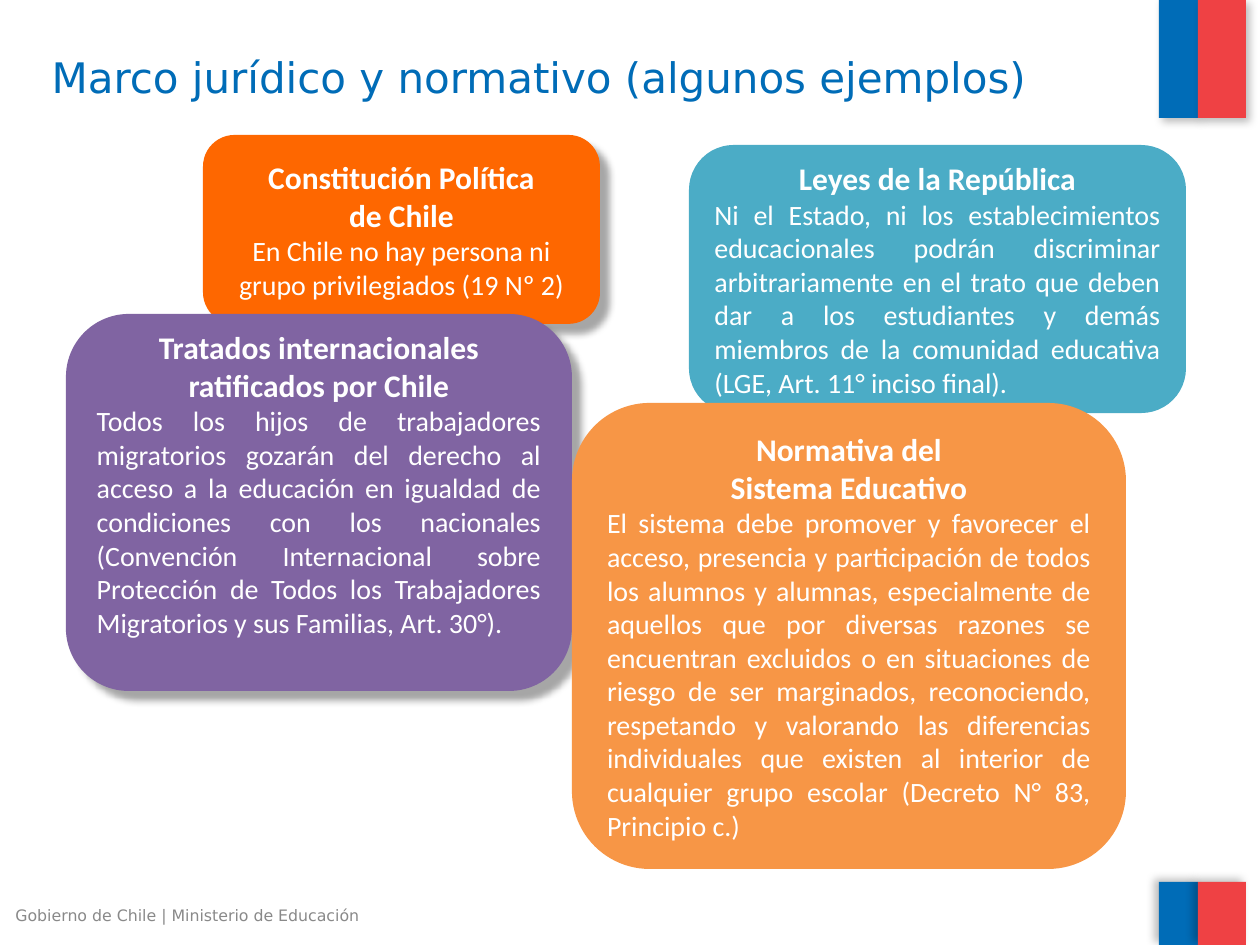
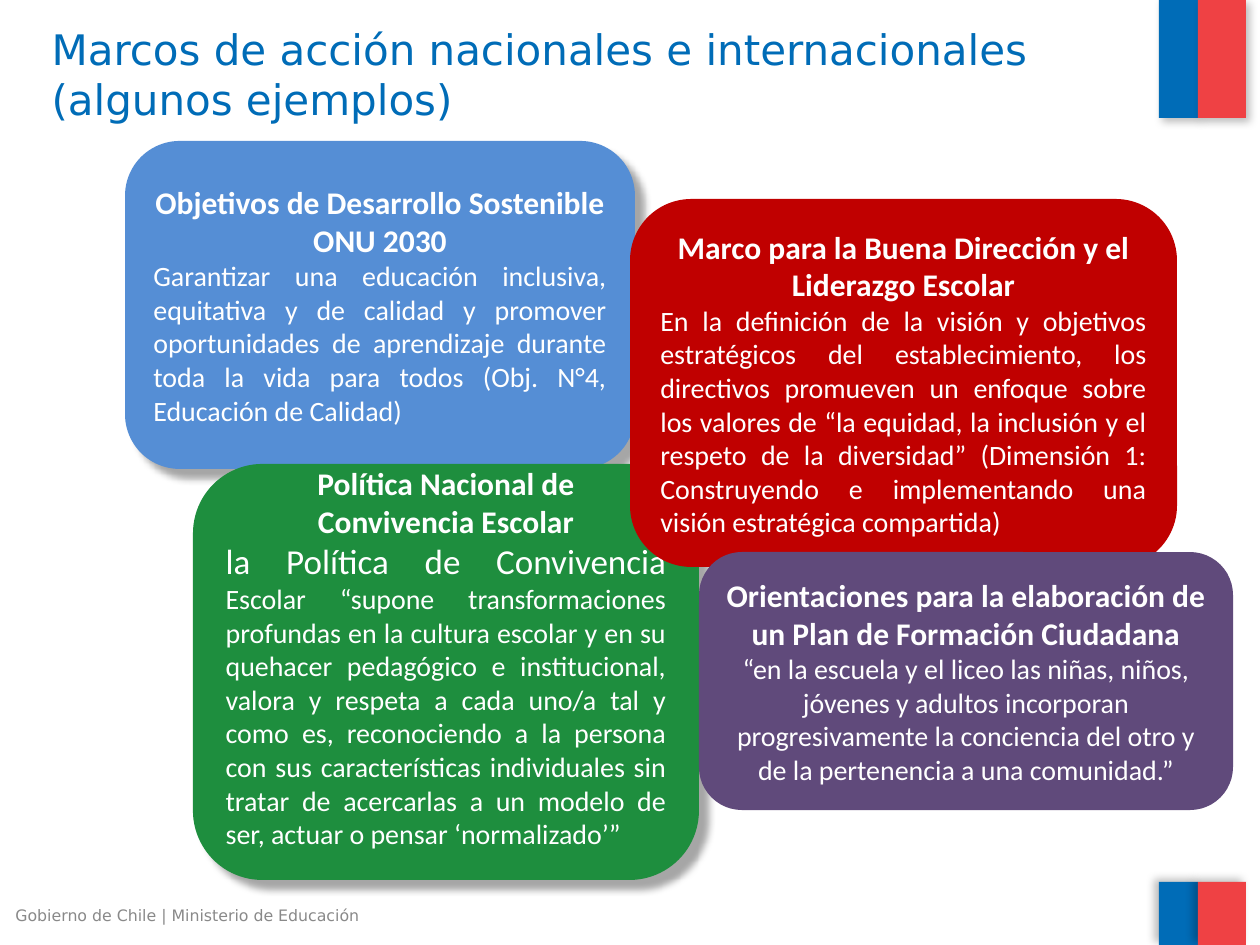
from lxml.etree import SubElement
from pptx import Presentation
from pptx.dml.color import RGBColor
from pptx.enum.shapes import MSO_SHAPE
from pptx.enum.text import MSO_ANCHOR, MSO_AUTO_SIZE, PP_ALIGN
from pptx.oxml.ns import qn
from pptx.util import Emu, Pt

PX = 914400 / 126
COLORS = {
    "blue": "006CB7", "red": "EF4144", "gray": "898989", "white": "FFFFFF",
    "black": "000000", "orange": "FE6700", "purple": "8064A2",
    "teal": "4BACC6", "peach": "F79646", "sky": "558ED5",
    "green": "1E8E3E", "wine": "C00000", "plum": "604A7B",
}
SANS, BODY = "DejaVu Sans", "Calibri"
LEFT, MID, JUST = PP_ALIGN.LEFT, PP_ALIGN.CENTER, PP_ALIGN.JUSTIFY
FOOTER = "Gobierno de Chile | Ministerio de Educación"

# Shadows: opacity %, blur pt, distance pt, angle
SOFT, BACK, DEEP = (25, 5, 3, 45), (25, 5, 3, 215), (35, 4, 8, 45)

# Shared bands: place, colour, shadow
BANDS = [
    ((1159, -1, 39, 119), "blue", SOFT),
    ((1198, 0, 48, 118), "red", SOFT),
    ((1159, 882, 39, 63), "blue", BACK),
    ((1198, 882, 48, 63), "red", BACK),
]


def px(*vals):
    return [Emu(round(v * PX)) for v in vals]


def tint(name):
    return RGBColor.from_string(COLORS[name])


def write(para, text, size=16, font=BODY, color="white", bold=False,
          align=LEFT):
    para.alignment = align
    run = para.add_run()
    run.text = text
    run.font.name = font
    run.font.size = Pt(size)
    run.font.bold = bold
    run.font.color.rgb = tint(color)


def shade(shape, alpha, blur, dist, angle):
    effects = shape._element.spPr.find(qn("a:effectLst"))
    outer = SubElement(effects, qn("a:outerShdw"), blurRad=str(Pt(blur)),
                       dist=str(Pt(dist)), dir=str(angle * 60000),
                       algn="tl", rotWithShape="0")
    color = SubElement(outer, qn("a:srgbClr"), val=COLORS["black"])
    SubElement(color, qn("a:alpha"), val=str(alpha * 1000))


def block(slide, kind, place, color, shadow=None):
    shape = slide.shapes.add_shape(kind, *px(*place))
    shape.fill.solid()
    shape.fill.fore_color.rgb = tint(color)
    shape.line.fill.background()
    shape.shadow.inherit = False
    if shadow:
        shade(shape, *shadow)
    return shape


def card(slide, place, color, heads, body, align=JUST, shadow=None,
         lead=None, foot=6):
    """Rounded box with bold heading lines over one body paragraph."""
    shape = block(slide, MSO_SHAPE.ROUNDED_RECTANGLE, place, color, shadow)
    frame = shape.text_frame
    frame.word_wrap = True
    frame.vertical_anchor = MSO_ANCHOR.MIDDLE
    frame.margin_bottom = px(foot)[0]
    para = frame.paragraphs[0]
    for head in heads:
        write(para, head, size=18, bold=True, align=MID)
        para = frame.add_paragraph()
    if lead:
        write(para, lead, size=20, align=align)
    write(para, body, align=align)


def page(deck, title, top, height):
    """Slide with title, footer and flag bands."""
    slide = deck.slides.add_slide(deck.slide_layouts[5])
    head = slide.shapes.title
    head.left, head.top, head.width, head.height = px(39, top, 1102, height)
    frame = head.text_frame
    frame.auto_size = MSO_AUTO_SIZE.NONE
    frame.vertical_anchor = MSO_ANCHOR.MIDDLE
    write(frame.paragraphs[0], title, size=24, font=SANS, color="blue")

    note = slide.shapes.add_textbox(*px(3, 900, 399, 34)).text_frame
    note.word_wrap = True
    write(note.paragraphs[0], FOOTER, size=9, font=SANS, color="gray")

    for place, color, shadow in BANDS:
        block(slide, MSO_SHAPE.RECTANGLE, place, color, shadow)
    return slide


def legal(deck):
    slide = page(deck, "Marco jurídico y normativo (algunos ejemplos)", 38, 77)
    card(slide, (203, 135, 397, 189), "orange",
         ["Constitución Política", "de Chile"],
         "En Chile no hay persona ni grupo privilegiados (19 Nº 2)",
         align=MID, shadow=DEEP)
    card(slide, (66, 314, 506, 377), "purple",
         ["Tratados internacionales ratificados por Chile"],
         "Todos los hijos de trabajadores migratorios gozarán del derecho al "
         "acceso a la educación en igualdad de condiciones con los nacionales "
         "(Convención Internacional sobre Protección de Todos los "
         "Trabajadores Migratorios y sus Familias, Art. 30°).",
         shadow=DEEP, foot=44)
    card(slide, (689, 145, 497, 268), "teal",
         ["Leyes de la República"],
         "Ni el Estado, ni los establecimientos educacionales podrán "
         "discriminar arbitrariamente en el trato que deben dar a los "
         "estudiantes y demás miembros de la comunidad educativa "
         "(LGE, Art. 11° inciso final).")
    card(slide, (572, 403, 554, 466), "peach",
         ["Normativa del", "Sistema Educativo"],
         "El sistema debe promover y favorecer el acceso, presencia y "
         "participación de todos los alumnos y alumnas, especialmente de "
         "aquellos que por diversas razones se encuentran excluidos o en "
         "situaciones de riesgo de ser marginados, reconociendo, respetando "
         "y valorando las diferencias individuales que existen al interior "
         "de cualquier grupo escolar (Decreto N° 83, Principio c.)")


def action(deck):
    slide = page(deck, "Marcos de acción nacionales e internacionales "
                 "(algunos ejemplos)", 6, 135)
    card(slide, (125, 141, 510, 328), "sky",
         ["Objetivos de Desarrollo Sostenible ONU 2030"],
         "Garantizar una educación inclusiva, equitativa y de calidad y "
         "promover oportunidades de aprendizaje durante toda la vida para "
         "todos (Obj. N°4, Educación de Calidad)", shadow=DEEP)
    card(slide, (193, 464, 506, 416), "green",
         ["Política Nacional de", "Convivencia Escolar"],
         "Escolar “supone transformaciones profundas en la cultura escolar "
         "y en su quehacer pedagógico e institucional, valora y respeta a "
         "cada uno/a tal y como es, reconociendo a la persona con sus "
         "características individuales sin tratar de acercarlas a un modelo "
         "de ser, actuar o pensar ‘normalizado’”",
         shadow=DEEP, lead="la Política de Convivencia ", foot=36)
    card(slide, (630, 199, 547, 368), "wine",
         ["Marco para la Buena Dirección y el Liderazgo Escolar"],
         "En la definición de la visión y objetivos estratégicos del "
         "establecimiento, los directivos promueven un enfoque sobre los "
         "valores de “la equidad, la inclusión y el respeto de la "
         "diversidad” (Dimensión 1: Construyendo e implementando una visión "
         "estratégica compartida)")
    card(slide, (699, 552, 534, 258), "plum",
         ["Orientaciones para la elaboración de un Plan de Formación "
          "Ciudadana"],
         "“en la escuela y el liceo las niñas, niños, jóvenes y adultos "
         "incorporan progresivamente la conciencia del otro y de la "
         "pertenencia a una comunidad.”", align=MID)


def main():
    deck = Presentation()
    deck.slide_width, deck.slide_height = px(1260, 945)
    legal(deck)
    action(deck)
    deck.save("out.pptx")


if __name__ == "__main__":
    main()
